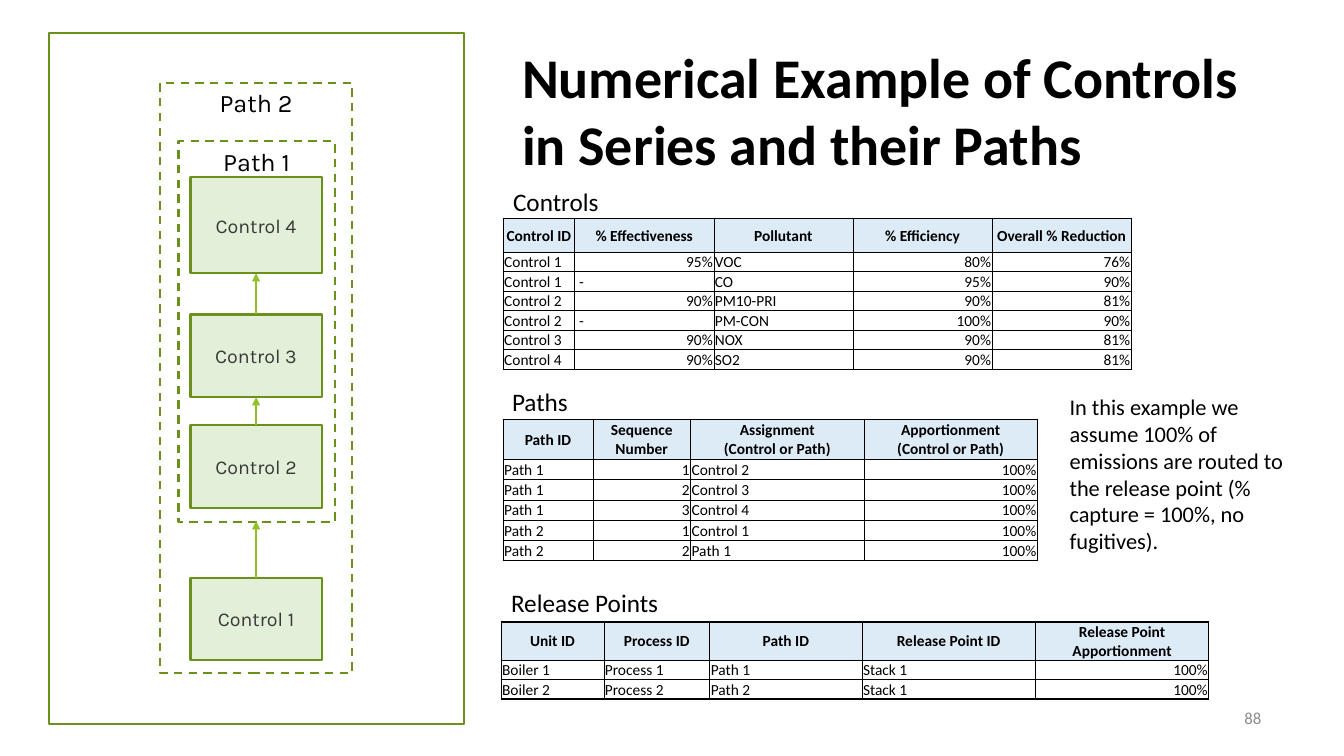
from lxml.etree import SubElement
from pptx import Presentation
from pptx.dml.color import RGBColor
from pptx.enum.dml import MSO_LINE_DASH_STYLE as DASH
from pptx.enum.shapes import MSO_CONNECTOR as CONNECTOR, MSO_SHAPE as SHAPE
from pptx.enum.text import MSO_ANCHOR as ANCHOR, PP_ALIGN as ALIGN
from pptx.oxml.ns import qn
from pptx.util import Inches, Pt


def color(value):
    return RGBColor.from_string(value)


def write(frame, text, size=11, font="Calibri", ink="000000", bold=False,
          align=ALIGN.LEFT, anchor=ANCHOR.TOP):
    """Fill a text frame, one paragraph for each line of the text."""
    frame.word_wrap = True
    frame.vertical_anchor = anchor
    for index, line in enumerate(text.split("\n")):
        paragraph = frame.paragraphs[0] if index == 0 else frame.add_paragraph()
        paragraph.alignment = align
        run = paragraph.add_run()
        run.text = line
        run.font.size = Pt(size)
        run.font.name = font
        run.font.bold = bold
        run.font.color.rgb = color(ink)


def set_borders(cell, widths):
    """Draw the left, right, top and bottom borders, in points."""
    properties = cell._tc.get_or_add_tcPr()
    for side, width in zip("LRTB", widths):
        line = SubElement(properties, qn(f"a:ln{side}"), w=str(Pt(width)))
        fill = SubElement(line, qn("a:solidFill"))
        SubElement(fill, qn("a:srgbClr"), val="000000")


class SlideBuilder:
    outline = "6B901C"
    arrow_color = "90C226"
    box_fill = "E2F0D9"
    header_fill = "DDEBF7"
    diagram_font = "Karla"

    def __init__(self, slide):
        self.slide = slide

    def text(self, text, left, top, width, height, **style):
        box = self.slide.shapes.add_textbox(*map(Inches, (left, top, width, height)))
        write(box.text_frame, text, **style)

    def rectangle(self, left, top, width, height, fill=None, dashed=False):
        shape = self.slide.shapes.add_shape(
            SHAPE.RECTANGLE, *map(Inches, (left, top, width, height)))
        shape.shadow.inherit = False
        if fill:
            shape.fill.solid()
            shape.fill.fore_color.rgb = color(fill)
        else:
            shape.fill.background()
        shape.line.color.rgb = color(self.outline)
        shape.line.width = Pt(1.5)
        if dashed:
            shape.line.dash_style = DASH.DASH
        return shape

    def control(self, name, top, height):
        shape = self.rectangle(1.89, top, 1.3, height, fill=self.box_fill)
        write(shape.text_frame, name, size=14, font=self.diagram_font, ink="3B3838",
              align=ALIGN.CENTER, anchor=ANCHOR.MIDDLE)

    def path_frame(self, name, left, top, width, height):
        shape = self.rectangle(left, top, width, height, dashed=True)
        write(shape.text_frame, name, size=18, font=self.diagram_font,
              align=ALIGN.CENTER)

    def arrow_up(self, x, bottom, top):
        connector = self.slide.shapes.add_connector(
            CONNECTOR.STRAIGHT, *map(Inches, (x, bottom, x, top)))
        connector.line.color.rgb = color(self.arrow_color)
        connector.line.width = Pt(1)
        SubElement(connector.line._get_or_add_ln(), qn("a:tailEnd"), type="triangle")
        SubElement(connector._element.spPr, qn("a:effectLst"))

    def table(self, left, top, widths, heights, rows):
        """Add a table with a shaded header row and a heavier outer border."""
        frame = self.slide.shapes.add_table(
            len(rows), len(widths),
            *map(Inches, (left, top, sum(widths), sum(heights))))
        table = frame.table
        table.horz_banding = False
        for column, width in zip(table.columns, widths):
            column.width = Inches(width)
        for row, height in zip(table.rows, heights):
            row.height = Inches(height)
        for r, values in enumerate(rows):
            for c, value in enumerate(values):
                cell = table.cell(r, c)
                cell.margin_left = cell.margin_right = cell.margin_top = Inches(0.01)
                cell.margin_bottom = 0
                edges = (c == 0, c == len(widths) - 1, r == 0, r == len(rows) - 1)
                set_borders(cell, [1 if edge else 0.5 for edge in edges])
                if r == 0:
                    cell.fill.solid()
                    cell.fill.fore_color.rgb = color(self.header_fill)
                    align, anchor = ALIGN.CENTER, ANCHOR.MIDDLE
                else:
                    cell.fill.background()
                    numeric = value.rstrip("%").isdigit()
                    align = ALIGN.RIGHT if numeric else ALIGN.LEFT
                    anchor = ANCHOR.BOTTOM
                write(cell.text_frame, value, bold=r == 0, align=align)
                cell.vertical_anchor = anchor


CONTROLS = [
    ("Control ID", "% Effectiveness", "Pollutant", "% Efficiency", "Overall % Reduction"),
    ("Control 1", "95%", "VOC", "80%", "76%"),
    ("Control 1", " -", "CO", "95%", "90%"),
    ("Control 2", "90%", "PM10-PRI", "90%", "81%"),
    ("Control 2", " -", "PM-CON", "100%", "90%"),
    ("Control 3", "90%", "NOX", "90%", "81%"),
    ("Control 4", "90%", "SO2", "90%", "81%"),
]
PATHS = [
    ("Path ID", "Sequence Number", "Assignment\n(Control or Path)",
     "Apportionment\n(Control or Path)"),
    ("Path 1", "1", "Control 2", "100%"),
    ("Path 1", "2", "Control 3", "100%"),
    ("Path 1", "3", "Control 4", "100%"),
    ("Path 2", "1", "Control 1", "100%"),
    ("Path 2", "2", "Path 1", "100%"),
]
RELEASE_POINTS = [
    ("Unit ID", "Process ID", "Path ID", "Release Point ID", "Release Point Apportionment"),
    ("Boiler 1", "Process 1", "Path 1", "Stack 1", "100%"),
    ("Boiler 2", "Process 2", "Path 2", "Stack 1", "100%"),
]


def main():
    presentation = Presentation()
    presentation.slide_width = Inches(13.33)
    presentation.slide_height = Inches(7.5)
    builder = SlideBuilder(presentation.slides.add_slide(presentation.slide_layouts[6]))

    builder.text("88", 9.61, 6.92, 3, 0.4, size=12, ink="8C8C8C",
                 align=ALIGN.RIGHT, anchor=ANCHOR.MIDDLE)
    builder.text("Numerical Example of Controls in Series and their Paths",
                 5.08, 0.37, 7.45, 1.45, size=40, bold=True)

    builder.rectangle(0.49, 0.33, 4.11, 6.85)
    builder.path_frame("Path 2", 1.59, 0.82, 1.9, 5.86)
    builder.path_frame("Path 1", 1.77, 1.4, 1.55, 3.78)
    for name, top, height in (("Control 1", 5.73, 0.82), ("Control 2", 4.22, 0.82),
                              ("Control 3", 3.12, 0.82), ("Control 4", 1.76, 0.95)):
        builder.control(name, top, height)
    for bottom, top in ((5.73, 5.17), (4.22, 3.94), (3.12, 2.71)):
        builder.arrow_up(2.54, bottom, top)

    builder.table(4.99, 2.17, [0.71] + [1.38] * 4, [0.33] + [0.19] * 6, CONTROLS)
    builder.table(4.99, 4.16, [0.89, 0.97, 1.72, 1.72], [0.4] + [0.2] * 5, PATHS)
    builder.table(4.97, 6.17, [1.02, 1.05, 1.51, 1.72, 1.72], [0.37, 0.19, 0.19],
                  RELEASE_POINTS)
    for heading, left, top, width in (("Controls", 4.99, 1.8, 1.42),
                                      ("Paths", 4.98, 3.78, 1.42),
                                      ("Release Points", 4.97, 5.78, 1.79)):
        builder.text(heading, left, top, width, 0.4, size=18)
    builder.text("In this example we assume 100% of emissions are routed to the release "
                 "point (% capture = 100%, no fugitives).",
                 10.51, 3.85, 2.33, 1.99, size=16)
    presentation.save("out.pptx")


if __name__ == "__main__":
    main()
